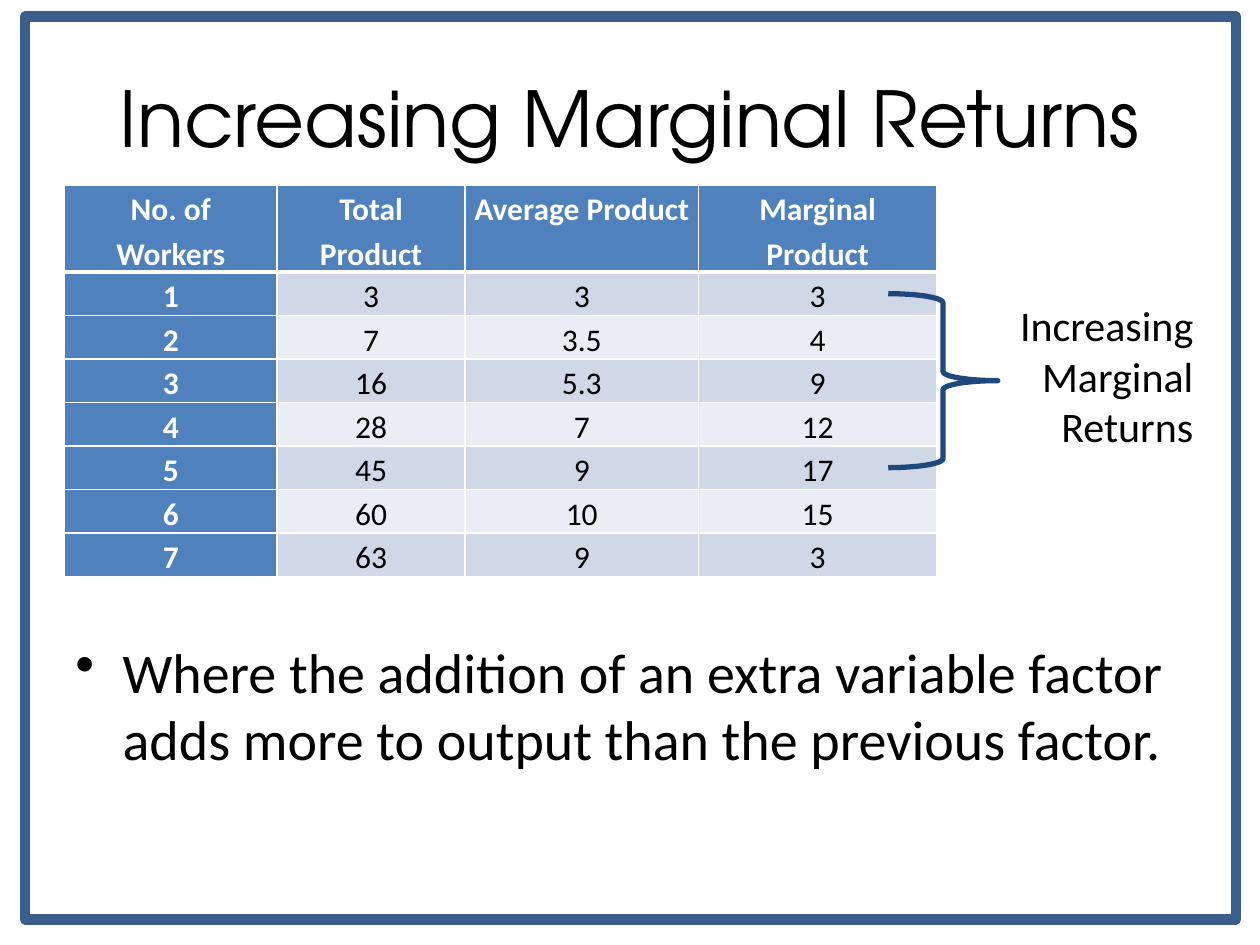
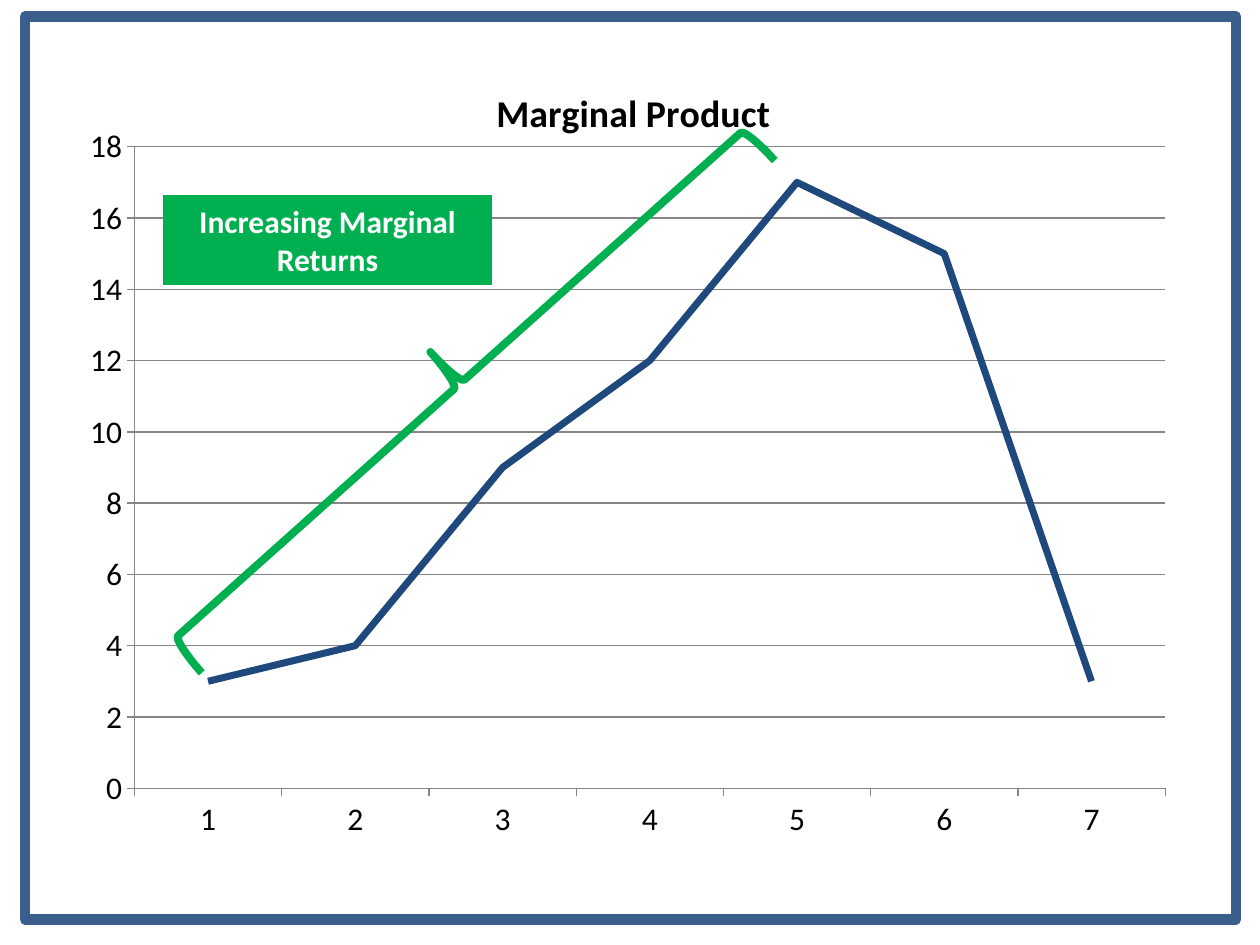
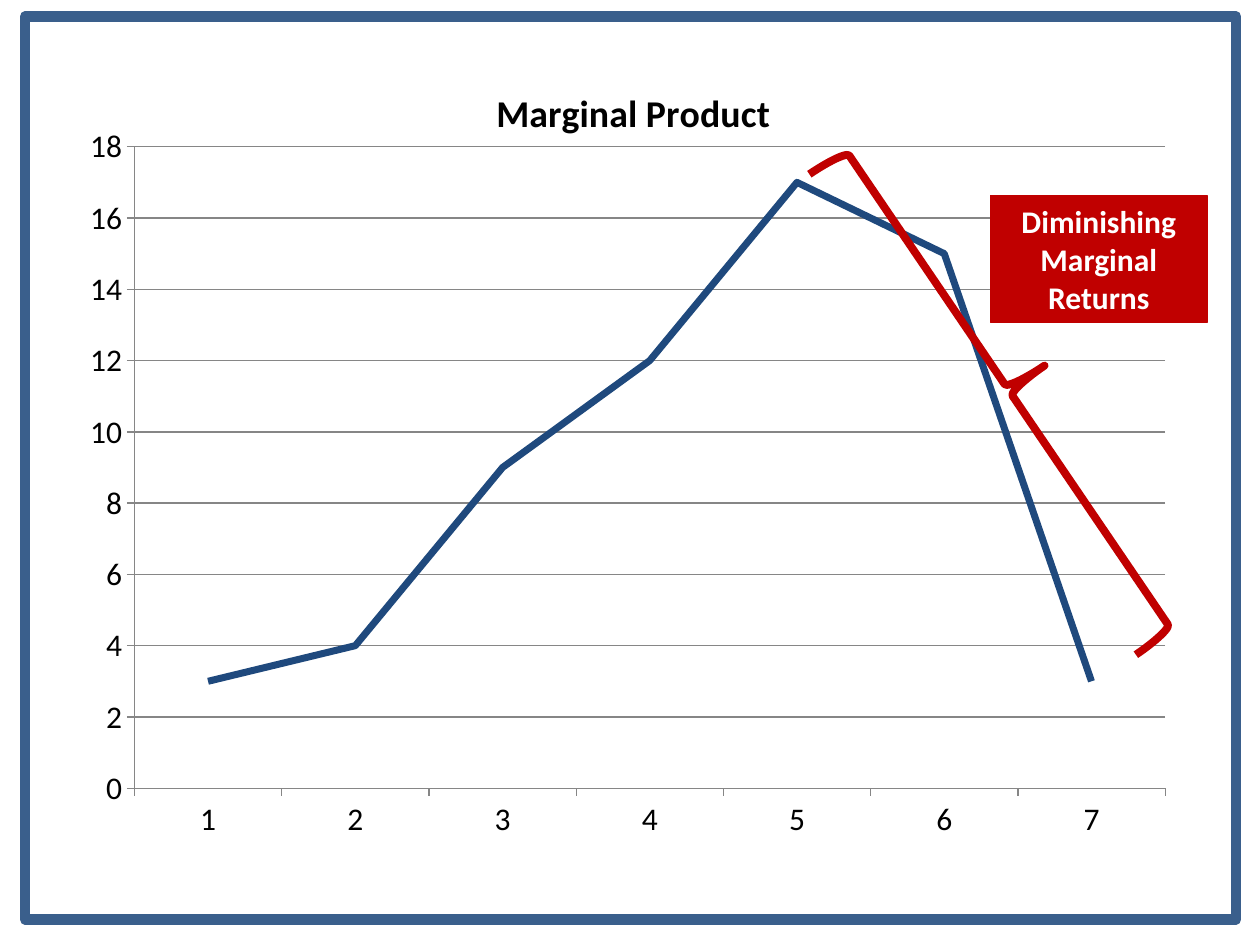
from lxml import etree
from pptx import Presentation
from pptx.chart.data import CategoryChartData
from pptx.dml.color import RGBColor
from pptx.enum.chart import XL_CHART_TYPE, XL_TICK_MARK
from pptx.enum.shapes import MSO_SHAPE
from pptx.enum.text import MSO_ANCHOR, PP_ALIGN
from pptx.oxml.ns import qn
from pptx.util import Pt

RECT, BRACE = MSO_SHAPE.RECTANGLE, MSO_SHAPE.RIGHT_BRACE
LINE, OUT = XL_CHART_TYPE.LINE, XL_TICK_MARK.OUTSIDE
LEFT, MID, RIGHT = PP_ALIGN.LEFT, PP_ALIGN.CENTER, PP_ALIGN.RIGHT
TOP, CENTER = MSO_ANCHOR.TOP, MSO_ANCHOR.MIDDLE

BODY, HEAD = "Calibri", "TeX Gyre Adventor"
BLACK, WHITE = "000000", "FFFFFF"
EDGE, NAVY, BLUE, GRAY = "3A5F8C", "1F497D", "4F81BD", "868686"
GREEN, RED = "00B050", "C00000"
BANDS = ("D0D8E8", "E9EDF4")

COLS = (121.7, 107.3, 133.5, 136.1)
ROWS = (
    ("No. of Workers", "Total Product", "Average Product", "Marginal Product"),
    ("1", "3", "3", "3"),
    ("2", "7", "3.5", "4"),
    ("3", "16", "5.3", "9"),
    ("4", "28", "7", "12"),
    ("5", "45", "9", "17"),
    ("6", "60", "10", "15"),
    ("7", "63", "9", "3"),
)


def color(code):
    """Turn a hex string into a colour."""
    return RGBColor.from_string(code)


def place(box):
    """Turn left, top, width and height into lengths."""
    return [Pt(n) for n in box]


def write(frame, text, size=18, font=BODY, tint=BLACK, bold=False,
          align=LEFT, space=None, before=None):
    """Write one formatted paragraph and return it."""
    para = frame.paragraphs[0]
    para.alignment = align
    if space:
        para.line_spacing = space
    if before:
        para.space_before = Pt(before)
    run = para.add_run()
    run.text = text
    run.font.size, run.font.name, run.font.bold = Pt(size), font, bold
    run.font.color.rgb = color(tint)
    return para


def add_text(slide, box, text, anchor=TOP, **style):
    """Add a wrapped text box and return its paragraph."""
    frame = slide.shapes.add_textbox(*place(box)).text_frame
    frame.word_wrap = True
    frame.vertical_anchor = anchor
    return write(frame, text, **style)


def add_bullet(para, indent):
    """Give a paragraph a hanging bullet."""
    props = para._p.get_or_add_pPr()
    props.set("marL", str(Pt(indent)))
    props.set("indent", str(-Pt(indent)))
    etree.SubElement(props, qn("a:buChar")).set("char", "•")


def add_form(slide, kind, box, edge, width, fill=None):
    """Add a preset shape with a plain line and an optional fill."""
    form = slide.shapes.add_shape(kind, *place(box))
    form.shadow.inherit = False
    form.line.color.rgb = color(edge)
    form.line.width = Pt(width)
    if fill:
        form.fill.solid()
        form.fill.fore_color.rgb = color(fill)
    else:
        form.fill.background()
    return form


def add_brace(slide, box, tint, turn):
    """Add a turned brace that spans part of the curve."""
    brace = add_form(slide, BRACE, box, tint, 4.5)
    brace.rotation = turn
    brace.adjustments[0], brace.adjustments[1] = 0.08, 0.5


def add_label(slide, box, text, tint):
    """Add a filled label with white bold text."""
    label = add_form(slide, RECT, box, tint, 0.75, tint)
    label.text_frame.word_wrap = True
    write(label.text_frame, text, tint=WHITE, bold=True, align=MID)


def add_edge(cell, side, width):
    """Add a white border to one side of a cell."""
    props = cell._tc.get_or_add_tcPr()
    line = etree.SubElement(props, qn("a:ln" + side), w=str(Pt(width)))
    fill = etree.SubElement(line, qn("a:solidFill"))
    etree.SubElement(fill, qn("a:srgbClr"), val=WHITE)


def add_grid(slide):
    """Add the product table."""
    box = (36.7, 105.8, sum(COLS), 22.3 * len(ROWS))
    table = slide.shapes.add_table(len(ROWS), len(COLS), *place(box)).table
    for col, width in zip(table.columns, COLS):
        col.width = Pt(width)
    for r, row in enumerate(ROWS):
        for c, text in enumerate(row):
            cell = table.cell(r, c)
            key = r == 0 or c == 0
            cell.margin_left = cell.margin_right = Pt(4.9)
            cell.margin_top = cell.margin_bottom = 0
            for side in "LRTB":
                thick = (r, side) in ((0, "B"), (1, "T"))
                add_edge(cell, side, 3 if thick else 1)
            cell.fill.solid()
            cell.fill.fore_color.rgb = color(BLUE if key else BANDS[(r - 1) % 2])
            write(cell.text_frame, text, tint=WHITE if key else BLACK,
                  bold=key, align=MID, space=1.15)


def set_layout(node, index, **parts):
    """Fix the place of a chart part by fractions of the chart."""
    old = node.find(qn("c:layout"))
    if old is not None:
        node.remove(old)
    layout = etree.Element(qn("c:layout"))
    manual = etree.SubElement(layout, qn("c:manualLayout"))
    for name, val in parts.items():
        etree.SubElement(manual, qn("c:" + name)).set("val", str(val))
    node.insert(index, layout)


def add_curve(slide):
    """Add the line chart of marginal product."""
    data = CategoryChartData()
    data.categories = [row[0] for row in ROWS[1:]]
    name = ROWS[0][3]
    data.add_series(name, [int(row[3]) for row in ROWS[1:]])
    box = place((31, 26, 654.5, 482.4))
    chart = slide.shapes.add_chart(LINE, *box, data).chart
    chart.has_legend = False
    chart.font.size, chart.font.name = Pt(18), BODY
    chart.font.color.rgb = color(BLACK)
    chart.has_title = True
    write(chart.chart_title.text_frame, name, size=21.6, bold=True, align=MID)
    plot = chart.plots[0]
    plot.vary_by_categories = False
    curve = plot.series[0]
    curve.smooth = False
    curve.format.line.color.rgb = color(NAVY)
    curve.format.line.width = Pt(4)
    scale = chart.value_axis
    scale.minimum_scale, scale.maximum_scale, scale.major_unit = 0, 18, 2
    scale.has_major_gridlines = True
    for axis in (chart.category_axis, scale):
        axis.major_tick_mark = OUT
    for part in (chart.category_axis, scale, scale.major_gridlines):
        part.format.line.color.rgb = color(GRAY)
        part.format.line.width = Pt(0.75)
    root = chart.element
    set_layout(root.find(".//" + qn("c:title")), 1,
               xMode="edge", yMode="edge", x=0.38, y=0.04)
    set_layout(root.find(".//" + qn("c:plotArea")), 0,
               layoutTarget="inner", xMode="edge", yMode="edge",
               x=0.07, y=0.12, w=0.9, h=0.76)


def add_page(deck):
    """Add a blank slide with the shared frame."""
    slide = deck.slides.add_slide(deck.slide_layouts[6])
    add_form(slide, RECT, (14.4, 9.4, 692, 516), EDGE, 6)
    return slide


def add_case(deck, span, turn, box, text, tint):
    """Add a chart slide with one marked stretch."""
    slide = add_page(deck)
    add_curve(slide)
    add_brace(slide, span, tint, turn)
    add_label(slide, box, text, tint)


def main():
    """Build the deck."""
    deck = Presentation()
    deck.slide_width, deck.slide_height = Pt(720), Pt(540)

    slide = add_page(deck)
    add_text(slide, (36, 21.6, 648, 90), "Increasing Marginal Returns",
             CENTER, size=44, font=HEAD, align=MID)
    para = add_text(slide, (36, 360.7, 648, 121.7),
                    "Where the addition of an extra variable factor adds "
                    "more to output than the previous factor.",
                    size=32, before=6.4)
    add_bullet(para, 27)
    add_grid(slide)
    add_form(slide, BRACE, (507.6, 167.8, 62.6, 99.4), NAVY, 3)
    add_text(slide, (553, 167.8, 136, 94.3), "Increasing Marginal Returns",
             size=24, align=RIGHT)

    add_case(deck, (237.6, 0, 49.7, 439.2), 228.2, (93.6, 111.6, 187.2, 51),
             "Increasing Marginal Returns", GREEN)
    add_case(deck, (551.5, 56.9, 49.7, 332), 325.8, (566, 111.6, 123.8, 72.7),
             "Diminishing Marginal Returns", RED)
    deck.save("out.pptx")


if __name__ == "__main__":
    main()
